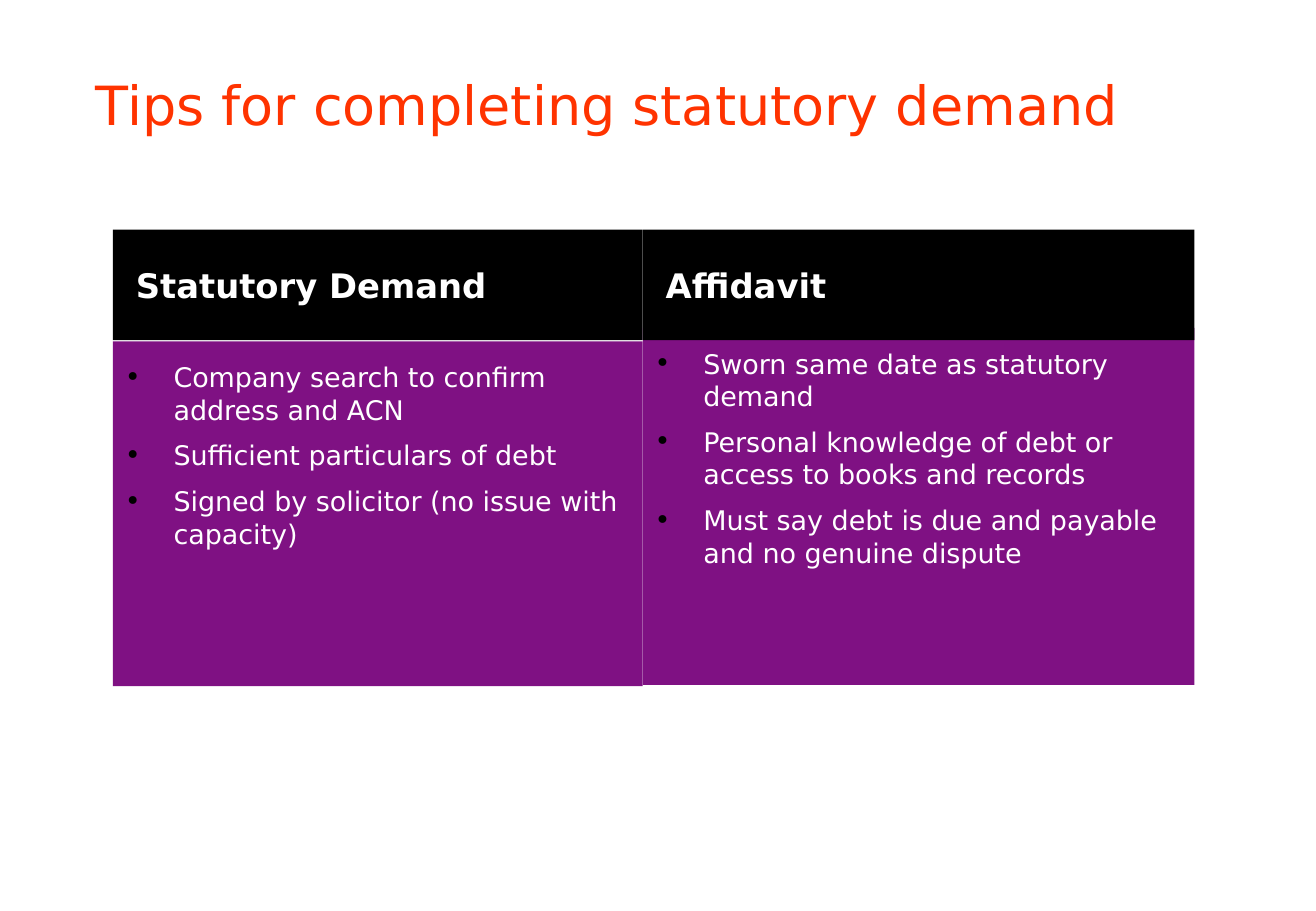
from dataclasses import dataclass

from lxml.etree import SubElement
from pptx import Presentation
from pptx.dml.color import RGBColor
from pptx.enum.shapes import MSO_SHAPE as Preset
from pptx.enum.text import MSO_ANCHOR as Anchor, PP_ALIGN as Align
from pptx.oxml.ns import qn
from pptx.util import Inches, Pt

FONT = "DejaVu Sans"
COLORS = {"title": "FF3300", "header": "000000", "body": "7F1183",
          "text": "FFFFFF", "bullet": "000000"}
HEADER_TOP, HEADER_HEIGHT = 1.89, 0.91
HEADER_INDENT, BULLET_INDENT = 0.09, 0.4


@dataclass(frozen=True)
class TipColumn:
    heading: str
    tips: tuple[str, ...]
    left: float
    width: float
    body_top: float
    body_height: float


COLUMNS = (
    TipColumn("Statutory Demand",
              ("Company search to confirm address and ACN",
               "Sufficient particulars of debt",
               "Signed by solicitor (no issue with capacity)"),
              0.93, 4.36, 2.81, 2.84),
    TipColumn("Affidavit",
              ("Sworn same date as statutory demand",
               "Personal knowledge of debt or access to books and records",
               "Must say debt is due and payable and no genuine dispute"),
              5.29, 4.54, 2.7, 2.94),
)


def color(name: str) -> RGBColor:
    return RGBColor.from_string(COLORS[name])


def set_frame(frame, anchor: Anchor, insets: tuple[float, float, float, float]) -> None:
    """Wrap the text and set its insets: left, top, right, bottom."""
    frame.word_wrap = True
    frame.vertical_anchor = anchor
    (frame.margin_left, frame.margin_top,
     frame.margin_right, frame.margin_bottom) = map(Inches, insets)


def add_run(paragraph, text: str, size: int, color_name: str, bold: bool = False) -> None:
    paragraph.alignment = Align.LEFT
    run = paragraph.add_run()
    run.text = text
    run.font.name = FONT
    run.font.size = Pt(size)
    run.font.bold = bold
    run.font.color.rgb = color(color_name)


def indent(paragraph, left: float, first_line: float = 0):
    properties = paragraph._p.get_or_add_pPr()
    properties.set("marL", str(Inches(left)))
    properties.set("indent", str(Inches(first_line)))
    return properties


def add_bullet(paragraph) -> None:
    properties = indent(paragraph, BULLET_INDENT, -BULLET_INDENT)
    bullet_color = SubElement(properties, qn("a:buClr"))
    SubElement(bullet_color, qn("a:srgbClr"), val=COLORS["bullet"])
    SubElement(properties, qn("a:buFont"), typeface=FONT)
    SubElement(properties, qn("a:buChar"), char="•")


def add_panel(slide, left: float, top: float, width: float, height: float, fill: str):
    panel = slide.shapes.add_shape(Preset.RECTANGLE, *map(Inches, (left, top, width, height)))
    panel.shadow.inherit = False
    panel.fill.solid()
    panel.fill.fore_color.rgb = color(fill)
    panel.line.fill.background()
    return panel.text_frame


def add_title(slide, text: str) -> None:
    title = slide.shapes.add_textbox(*map(Inches, (0.79, 0.59, 9.54, 1.02)))
    set_frame(title.text_frame, Anchor.TOP, (0, 0, 0, 0))
    add_run(title.text_frame.paragraphs[0], text, 32, "title")


def add_column(slide, column: TipColumn) -> None:
    body = add_panel(slide, column.left, column.body_top,
                     column.width, column.body_height, "body")
    set_frame(body, Anchor.TOP, (0.1, 0.16, 0.08, 0.08))
    for number, tip in enumerate(column.tips):
        paragraph = body.add_paragraph() if number else body.paragraphs[0]
        paragraph.space_after = Pt(8)
        add_bullet(paragraph)
        add_run(paragraph, tip, 16, "text")

    header = add_panel(slide, column.left, HEADER_TOP,
                       column.width, HEADER_HEIGHT, "header")
    set_frame(header, Anchor.MIDDLE, (0.1, 0, 0.08, 0))
    indent(header.paragraphs[0], HEADER_INDENT)
    add_run(header.paragraphs[0], column.heading, 20, "text", bold=True)


def main() -> None:
    deck = Presentation()
    deck.slide_width, deck.slide_height = Inches(10.83), Inches(7.5)
    slide = deck.slides.add_slide(deck.slide_layouts[6])
    add_title(slide, "Tips for completing statutory demand")
    for column in COLUMNS:
        add_column(slide, column)
    deck.save("out.pptx")


if __name__ == "__main__":
    main()
